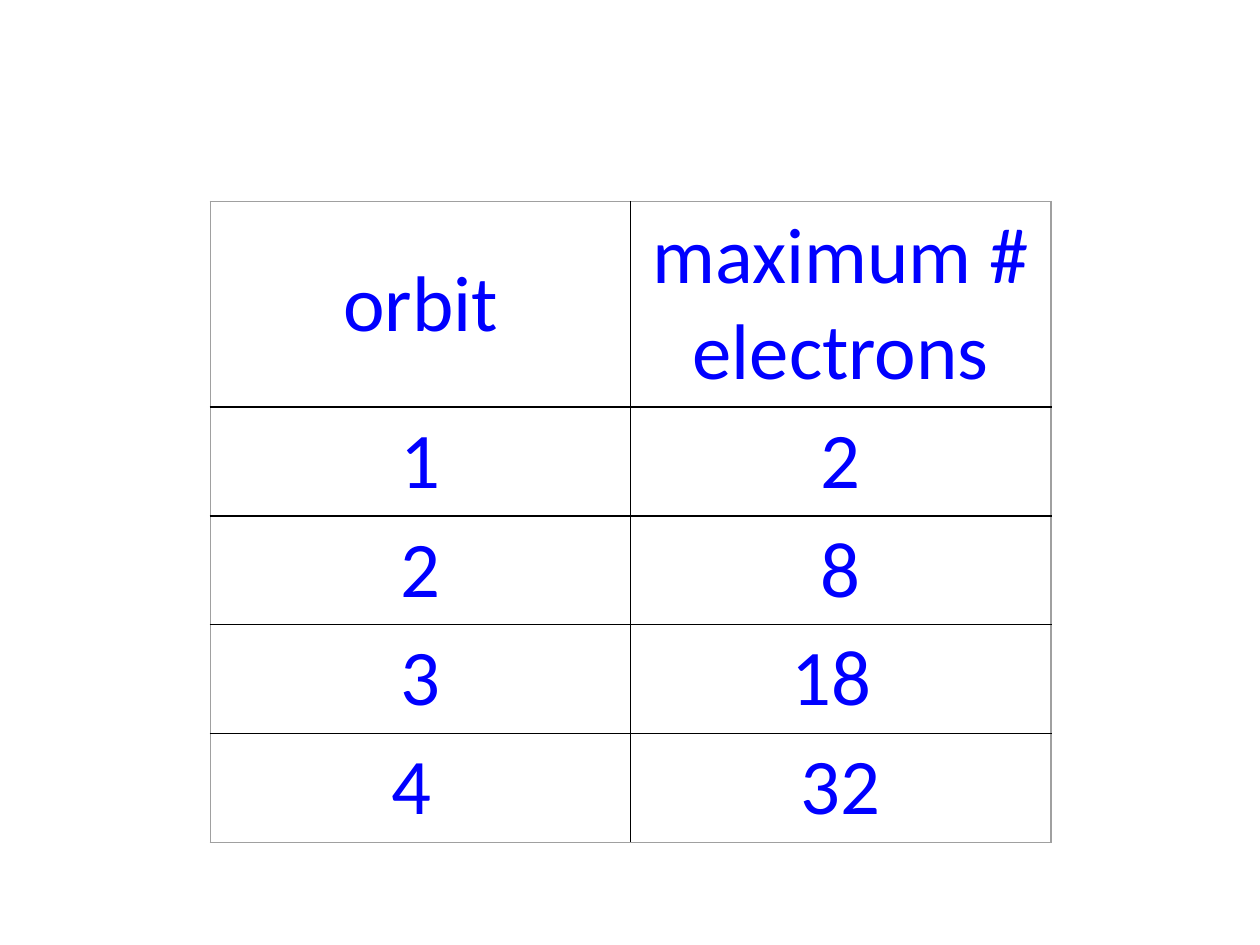
from lxml.etree import SubElement
from pptx import Presentation
from pptx.dml.color import RGBColor
from pptx.enum.text import MSO_ANCHOR, PP_ALIGN
from pptx.oxml.ns import qn
from pptx.util import Inches, Pt

BLUE = RGBColor(0x00, 0x00, 0xFF)
BLACK = RGBColor(0x00, 0x00, 0x00)
GREY = RGBColor(0xA0, 0xA0, 0xA0)
ROWS = [
    ("orbit", "maximum # electrons"),
    ("1", "2"),
    ("2", "8"),
    ("3", "18 "),
    ("4 ", "32"),
]


def put_text(cell, text, font="Calibri", size=45, color=BLUE,
             align=PP_ALIGN.CENTER, anchor=MSO_ANCHOR.TOP):
    """Write formatted text into a cell."""
    cell.vertical_anchor = anchor
    para = cell.text_frame.paragraphs[0]
    para.alignment = align
    run = para.add_run()
    run.text = text
    run.font.name = font
    run.font.size = Pt(size)
    run.font.color.rgb = color


def add_edge(cell, side, color, width=1):
    """Draw one border of a cell."""
    props = cell._tc.get_or_add_tcPr()
    line = SubElement(props, qn(f"a:ln{side}"), w=str(Pt(width)))
    fill = SubElement(line, qn("a:solidFill"))
    SubElement(fill, qn("a:srgbClr"), val=str(color))


def add_grid(slide, rows):
    """Add the table of orbits and electrons."""
    count, wide = len(rows), len(rows[0])
    heights = [1.63] + [0.86] * (count - 1)
    frame = slide.shapes.add_table(
        count, wide, Inches(1.67), Inches(1.6),
        Inches(6.67), Inches(sum(heights)))
    table = frame.table
    table.first_row = table.horz_banding = False
    for r, row in enumerate(rows):
        table.rows[r].height = Inches(heights[r])
        for c, text in enumerate(row):
            cell = table.cell(r, c)
            outer = {"L": c == 0, "R": c == wide - 1,
                     "T": r == 0, "B": r == count - 1}
            for side, rim in outer.items():
                add_edge(cell, side, GREY if rim else BLACK)
            cell.fill.background()
            anchor = MSO_ANCHOR.TOP if r else MSO_ANCHOR.MIDDLE
            put_text(cell, text, anchor=anchor)


def main():
    """Build and save the slide."""
    deck = Presentation()
    deck.slide_width, deck.slide_height = Inches(10), Inches(7.5)
    slide = deck.slides.add_slide(deck.slide_layouts[6])
    add_grid(slide, ROWS)
    deck.save("out.pptx")


if __name__ == "__main__":
    main()
